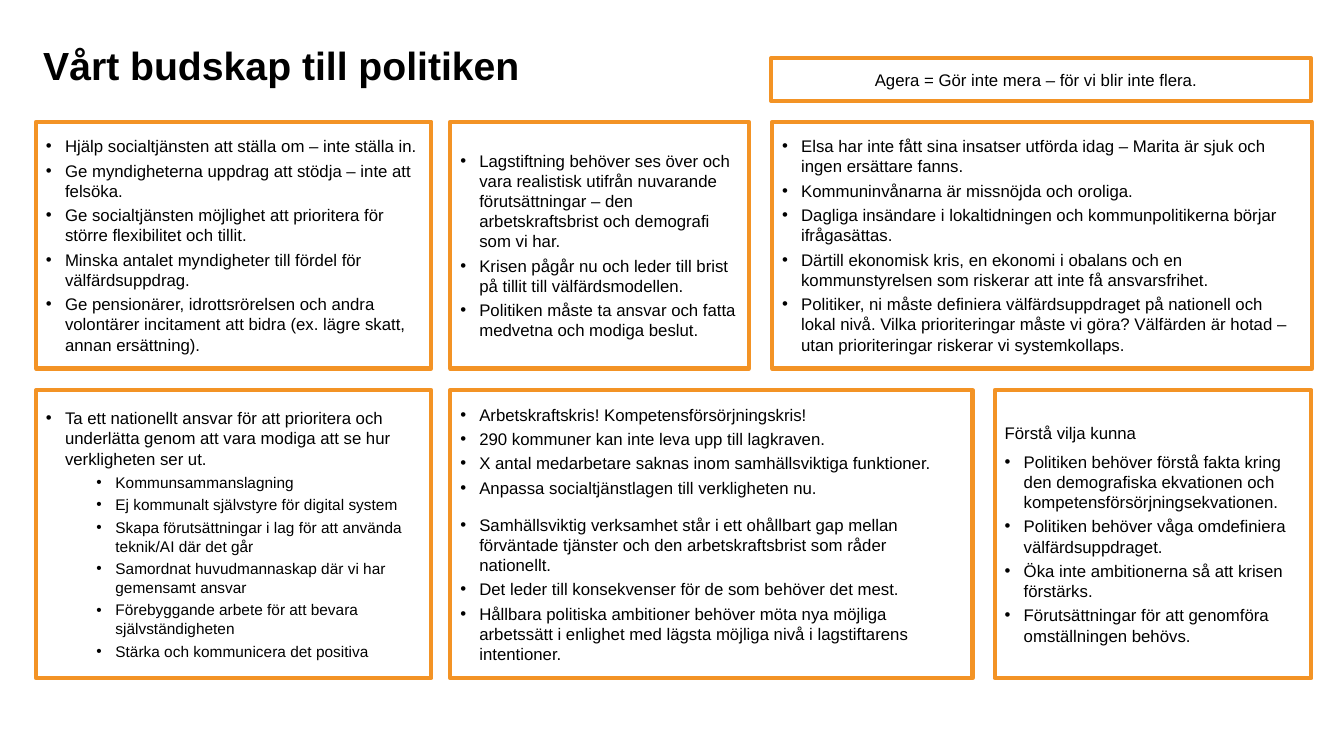
from dataclasses import dataclass

from lxml import etree
from pptx import Presentation
from pptx.dml.color import RGBColor
from pptx.enum.shapes import MSO_SHAPE
from pptx.enum.text import MSO_ANCHOR, PP_ALIGN
from pptx.oxml.ns import qn
from pptx.util import Cm, Pt

RECTANGLE = MSO_SHAPE.RECTANGLE
MIDDLE = MSO_ANCHOR.MIDDLE
LEFT = PP_ALIGN.LEFT
CENTER = PP_ALIGN.CENTER

FONT = "Arial"
BLACK = "000000"
ORANGE = "F39325"
HANGING = 0.48
SUB_INDENT = 1.75
UPPER_TOP, UPPER_HEIGHT = 3.07, 6.22
LOWER_TOP, LOWER_HEIGHT = 9.83, 7.26
LEFT_COLUMN, MIDDLE_COLUMN = 0.91, 11.35


@dataclass
class Entry:
    text: str
    after: int = 3
    level: int = 0
    bullet: bool = True
    align: int = LEFT


REFORMS = [
    Entry("Hjälp socialtjänsten att ställa om – inte ställa in."),
    Entry("Ge myndigheterna uppdrag att stödja – inte att felsöka."),
    Entry("Ge socialtjänsten möjlighet att prioritera för större flexibilitet och tillit."),
    Entry("Minska antalet myndigheter till fördel för välfärdsuppdrag."),
    Entry("Ge pensionärer, idrottsrörelsen och andra volontärer incitament att bidra "
          "(ex. lägre skatt, annan ersättning)."),
]
LEGISLATION = [
    Entry("Lagstiftning behöver ses över och vara realistisk utifrån nuvarande "
          "förutsättningar – den arbetskraftsbrist och demografi som vi har."),
    Entry("Krisen pågår nu och leder till brist på tillit till välfärdsmodellen."),
    Entry("Politiken måste ta ansvar och fatta medvetna och modiga beslut."),
]
EVERYDAY = [
    Entry("Elsa har inte fått sina insatser utförda idag – Marita är sjuk och "
          "ingen ersättare fanns."),
    Entry("Kommuninvånarna är missnöjda och oroliga."),
    Entry("Dagliga insändare i lokaltidningen och kommunpolitikerna börjar ifrågasättas."),
    Entry("Därtill ekonomisk kris, en ekonomi i obalans och en kommunstyrelsen som "
          "riskerar att inte få ansvarsfrihet."),
    Entry("Politiker, ni måste definiera välfärdsuppdraget på nationell och lokal nivå. "
          "Vilka prioriteringar måste vi göra? Välfärden är hotad – utan "
          "prioriteringar riskerar vi systemkollaps."),
]
NATIONAL = [
    Entry("Ta ett nationellt ansvar för att prioritera och underlätta genom att vara "
          "modiga att se hur verkligheten ser ut."),
    Entry("Kommunsammanslagning", level=1),
    Entry("Ej kommunalt självstyre för digital system", level=1),
    Entry("Skapa förutsättningar i lag för att använda teknik/AI där det går", level=1),
    Entry("Samordnat huvudmannaskap där vi har gemensamt ansvar", level=1),
    Entry("Förebyggande arbete för att bevara självständigheten", level=1),
    Entry("Stärka och kommunicera det positiva", level=1),
]
WORKFORCE = [
    Entry("Arbetskraftskris! Kompetensförsörjningskris!"),
    Entry("290 kommuner kan inte leva upp till lagkraven."),
    Entry("X antal medarbetare saknas inom samhällsviktiga funktioner."),
    Entry("Anpassa socialtjänstlagen till verkligheten nu.", after=12),
    Entry("Samhällsviktig verksamhet står i ett ohållbart gap mellan förväntade "
          "tjänster och den arbetskraftsbrist som råder nationellt."),
    Entry("Det leder till konsekvenser för de som behöver det mest."),
    Entry("Hållbara politiska ambitioner behöver möta nya möjliga arbetssätt i enlighet "
          "med lägsta möjliga nivå i lagstiftarens intentioner."),
]
UNDERSTANDING = [
    Entry("Förstå vilja kunna", after=6, bullet=False),
    Entry("Politiken behöver förstå fakta kring den demografiska ekvationen och "
          "kompetensförsörjningsekvationen."),
    Entry("Politiken behöver våga omdefiniera välfärdsuppdraget."),
    Entry("Öka inte ambitionerna så att krisen förstärks."),
    Entry("Förutsättningar för att genomföra omställningen behövs."),
]
CALL = [Entry("Agera = Gör inte mera – för vi blir inte flera.", after=6,
              bullet=False, align=CENTER)]

PANELS = [
    (LEFT_COLUMN, UPPER_TOP, 9.96, UPPER_HEIGHT, REFORMS),
    (MIDDLE_COLUMN, UPPER_TOP, 7.52, UPPER_HEIGHT, LEGISLATION),
    (19.46, UPPER_TOP, 13.61, UPPER_HEIGHT, EVERYDAY),
    (LEFT_COLUMN, LOWER_TOP, 9.96, LOWER_HEIGHT, NATIONAL),
    (MIDDLE_COLUMN, LOWER_TOP, 13.16, LOWER_HEIGHT, WORKFORCE),
    (25.07, LOWER_TOP, 7.98, LOWER_HEIGHT, UNDERSTANDING),
]


def color(value):
    return RGBColor.from_string(value)


def format_text(para, size, bold=False):
    for span in para.runs:
        span.font.name = FONT
        span.font.size = Pt(size)
        span.font.bold = bold
        span.font.color.rgb = color(BLACK)


def add_bullet(para, indent):
    properties = para._p.get_or_add_pPr()
    properties.set("marL", str(Cm(indent)))
    properties.set("indent", str(-Cm(HANGING)))
    etree.SubElement(properties, qn("a:buFont")).set("typeface", FONT)
    etree.SubElement(properties, qn("a:buChar")).set("char", "•")


def write_entry(para, entry):
    para.text = entry.text
    para.level = entry.level
    if entry.bullet:
        add_bullet(para, SUB_INDENT if entry.level else HANGING)
    para.alignment = entry.align
    para.space_after = Pt(entry.after)
    format_text(para, 11 if entry.level else 12)


def add_panel(page, left, top, width, height, entries):
    box = page.shapes.add_shape(RECTANGLE, Cm(left), Cm(top), Cm(width), Cm(height))
    box.shadow.inherit = False
    box.fill.background()
    box.line.color.rgb = color(ORANGE)
    box.line.width = Pt(3)
    frame = box.text_frame
    frame.word_wrap = True
    frame.vertical_anchor = MIDDLE
    for index, entry in enumerate(entries):
        para = frame.add_paragraph() if index else frame.paragraphs[0]
        write_entry(para, entry)
    return box


def add_title(page, text):
    box = page.shapes.add_textbox(Cm(0.79), Cm(0.74), Cm(12.8), Cm(1.8))
    frame = box.text_frame
    frame.word_wrap = True
    frame.margin_left = frame.margin_right = Cm(0.3)
    frame.margin_top = frame.margin_bottom = Cm(0.3)
    frame.text = text
    format_text(frame.paragraphs[0], 28, bold=True)


def main():
    deck = Presentation()
    deck.slide_width, deck.slide_height = Cm(33.87), Cm(19.05)
    page = deck.slides.add_slide(deck.slide_layouts[6])
    add_title(page, "Vårt budskap till politiken")
    call_box = add_panel(page, 19.43, 1.47, 13.61, 1.07, CALL)
    call_box.text_frame.margin_right = Cm(0.5)
    for panel in PANELS:
        add_panel(page, *panel)
    deck.save("out.pptx")


if __name__ == "__main__":
    main()
